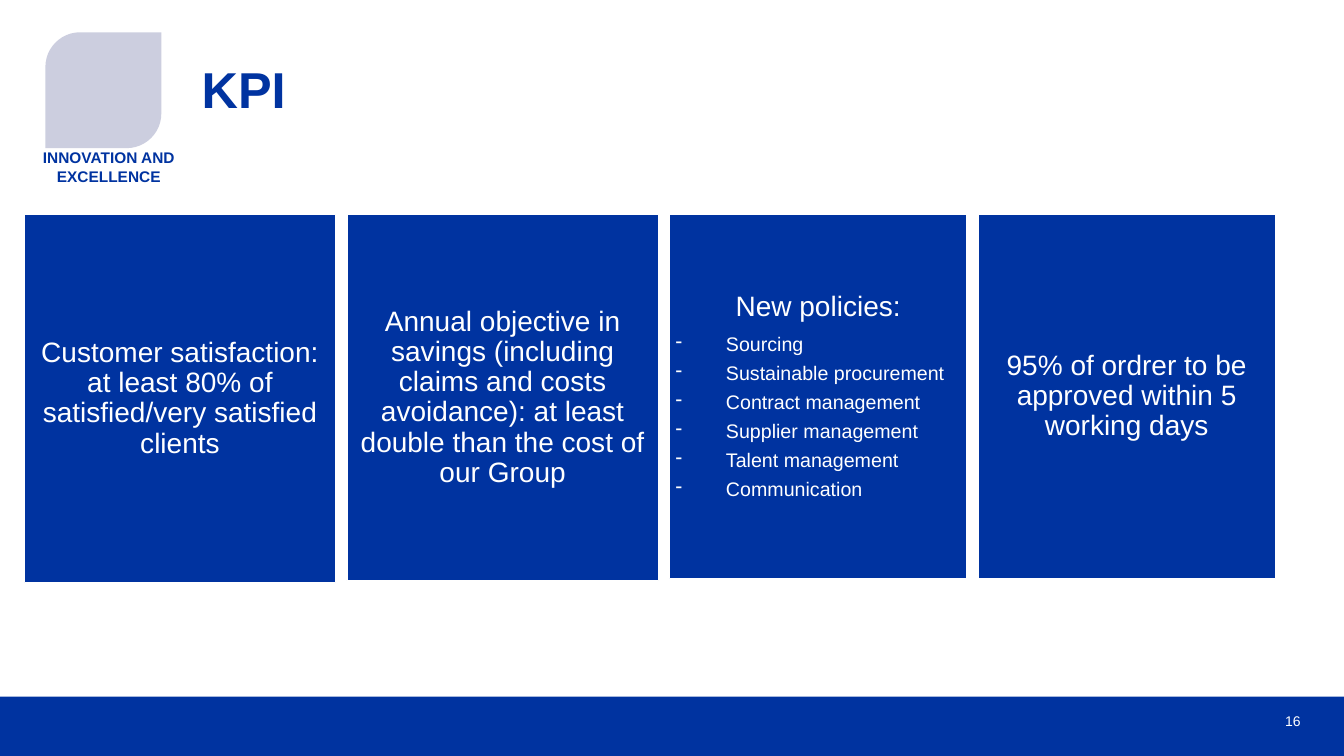
from lxml import etree
from pptx import Presentation
from pptx.dml.color import RGBColor
from pptx.enum import shapes, text
from pptx.oxml.ns import qn
from pptx.util import Inches, Pt

BLUE, WHITE, GREY = "0033A0", "FFFFFF", "CCCEDF"
LEFT, TOP, GAP = 0.24, 2.13, 0.11
MID, RIGHT = text.PP_ALIGN.CENTER, text.PP_ALIGN.RIGHT

# width, height, heading, bullet items
CARDS = [
    (3.09, 3.65, "Customer satisfaction: at least 80% of "
     "satisfied/very satisfied clients", []),
    (3.09, 3.63, "Annual objective in savings (including claims and costs "
     "avoidance): at least double than the cost of our Group", []),
    (2.95, 3.61, "New policies:",
     ["Sourcing", "Sustainable procurement", "Contract management",
      "Supplier management", "Talent management", "Communication"]),
    (2.95, 3.61, "95% of ordrer to be approved within 5 working days", []),
]

# left, top, width, height, words, size, colour, bold, align, anchor
LABELS = [
    (2, 0.64, 10.44, 1.17, "KPI", 36, BLUE, True,
     text.PP_ALIGN.LEFT, text.MSO_ANCHOR.TOP),
    (0, 1.47, 2.16, 0.45, "INNOVATION AND EXCELLENCE", 11, BLUE, True,
     MID, text.MSO_ANCHOR.TOP),
    (12.15, 6.95, 0.75, 0.4, "16", 10, WHITE, False,
     RIGHT, text.MSO_ANCHOR.MIDDLE),
]

deck = Presentation()
deck.slide_width, deck.slide_height = Inches(13.33), Inches(7.5)
slide = deck.slides.add_slide(deck.slide_layouts[6])


def tint(target, code):
    """Colour a font, or a fill that is already solid."""
    getattr(target, "color", None) or target
    color = target.color if hasattr(target, "color") else target.fore_color
    color.rgb = RGBColor.from_string(code)


def add_block(kind, box, fill):
    block = slide.shapes.add_shape(kind, *map(Inches, box))
    block.shadow.inherit = False
    block.fill.solid()
    tint(block.fill, fill)
    block.line.fill.background()
    return block


def set_frame(frame, inset, anchor):
    frame.word_wrap = True
    frame.vertical_anchor = anchor
    frame.margin_left = frame.margin_right = Inches(inset)
    frame.margin_top = frame.margin_bottom = Inches(inset)


def write(para, words, size, code, align, bold=False):
    para.text = words
    para.alignment = align
    font = para.font
    font.name, font.size, font.bold = "Arial", Pt(size), bold
    tint(font, code)


def add_dash(para):
    props = para._p.get_or_add_pPr()
    props.set("marL", str(Inches(0.5)))
    props.set("indent", str(-Inches(0.5)))
    etree.SubElement(props, qn("a:buChar")).set("char", "-")


def add_card(left, width, height, head, items):
    card = add_block(shapes.MSO_SHAPE.RECTANGLE, (left, TOP, width, height), BLUE)
    card.line.width = Pt(1)
    card.line.fill.solid()
    tint(card.line, WHITE)
    frame = card.text_frame
    set_frame(frame, 0.06, text.MSO_ANCHOR.MIDDLE)
    write(frame.paragraphs[0], head, 20, WHITE, MID)
    for item in items:
        para = frame.add_paragraph()
        add_dash(para)
        write(para, item, 14, WHITE, text.PP_ALIGN.LEFT)
    for para in frame.paragraphs:
        para.line_spacing = 0.9
        para.space_after = Pt(round(para.font.size.pt * 0.4, 1))


add_block(shapes.MSO_SHAPE.RECTANGLE, (0, 6.91, 13.33, 0.59), BLUE)
badge = add_block(shapes.MSO_SHAPE.ROUND_2_DIAG_RECTANGLE,
                  (0.45, 0.32, 1.15, 1.15), GREY)
badge.adjustments[0] = 0.3

left = LEFT
for width, height, head, items in CARDS:
    add_card(left, width, height, head, items)
    left += width + GAP

for *box, words, size, code, bold, align, anchor in LABELS:
    frame = slide.shapes.add_textbox(*map(Inches, box)).text_frame
    set_frame(frame, 0, anchor)
    write(frame.paragraphs[0], words, size, code, align, bold)
    if size == 36:
        frame.paragraphs[0].line_spacing = 0.9

deck.save("out.pptx")
